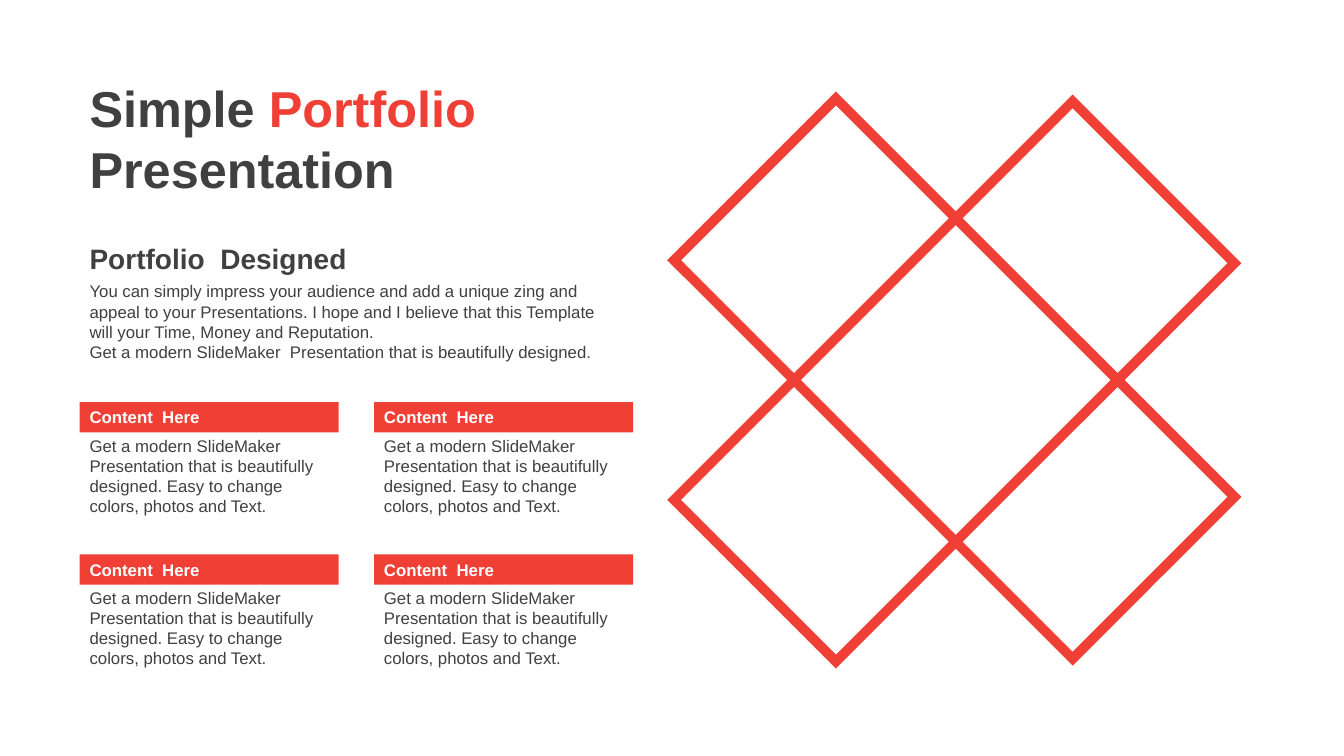
from itertools import product

from pptx import Presentation
from pptx.dml.color import RGBColor
from pptx.enum.shapes import MSO_SHAPE as Shape
from pptx.enum.text import MSO_ANCHOR as Anchor, MSO_AUTO_SIZE as AutoSize
from pptx.oxml.ns import qn
from pptx.util import Pt
from lxml.etree import SubElement

RED = RGBColor(0xF0, 0x40, 0x36)
GREY = RGBColor(0x40, 0x40, 0x40)
WHITE = RGBColor(0xFF, 0xFF, 0xFF)

EMU_PER_PX = 9144  # 100 px to the inch

INTRO = [
    "You can simply impress your audience and add a unique zing and appeal to your "
    "Presentations. I hope and I believe that this Template will your Time, Money "
    "and Reputation.",
    "Get a modern SlideMaker  Presentation that is beautifully designed.",
]
CARD_TITLE = "Content  Here"
CARD_BODY = ("Get a modern SlideMaker  Presentation that is beautifully designed. "
             "Easy to change colors, photos and Text.")


def px(*lengths):
    return [round(length * EMU_PER_PX) for length in lengths]


def add_text(slide, box, paragraphs, size=12, color=GREY, bold=False, fill=None,
             anchor=Anchor.TOP, grow=True, line_spacing=None, space_before=None):
    """Each paragraph is a string or a list of (text, color) runs."""
    if fill is None:
        holder = slide.shapes.add_textbox(*px(*box))
    else:
        holder = add_rectangle(slide, box)
        holder.fill.solid()
        holder.fill.fore_color.rgb = fill
        holder.line.fill.background()
    frame = holder.text_frame
    frame.word_wrap = True
    frame.auto_size = AutoSize.SHAPE_TO_FIT_TEXT if grow else AutoSize.NONE
    frame.vertical_anchor = anchor
    for index, content in enumerate(paragraphs):
        paragraph = frame.add_paragraph() if index else frame.paragraphs[0]
        paragraph.alignment = 1  # left
        paragraph.line_spacing = line_spacing
        paragraph.space_before = space_before
        runs = [(content, color)] if isinstance(content, str) else content
        for words, run_color in runs:
            run = paragraph.add_run()
            run.text = words
            run.font.name = "Arial"
            run.font.size = Pt(size)
            run.font.bold = bold
            run.font.color.rgb = run_color


def add_rectangle(slide, box):
    rectangle = slide.shapes.add_shape(Shape.RECTANGLE, *px(*box))
    rectangle.shadow.inherit = False
    return rectangle


def add_lattice(slide, left, top, width, height):
    """Two long frames, crossed at right angles."""
    for angle, drop in ((45, 3), (315, 0)):
        frame = add_rectangle(slide, (left, top + drop, width, height))
        frame.rotation = angle
        frame.fill.background()
        frame.line.color.rgb = RED
        frame.line.width = Pt(7)
        # Sharp corners
        SubElement(frame.line._get_or_add_ln(), qn("a:miter"), lim="800000")


def add_title(slide, left, top, width, height):
    add_text(slide, (left, top, width, height),
             [[("Simple", GREY), (" Portfolio", RED)], "Presentation"],
             size=36, bold=True)


def add_intro(slide, left, top, width, height):
    heading_height = 39
    add_text(slide, (left, top, width, heading_height), ["Portfolio  Designed"],
             size=20, bold=True, anchor=Anchor.MIDDLE, grow=False,
             line_spacing=1.1, space_before=Pt(4))
    add_text(slide, (left, top + heading_height, width, height - heading_height), INTRO)


def add_card(slide, left, top, width, height):
    body_offset = 28
    add_text(slide, (left, top, width, 30), [CARD_TITLE], color=WHITE, bold=True,
             fill=RED, anchor=Anchor.MIDDLE)
    add_text(slide, (left, top + body_offset, width, height - body_offset), [CARD_BODY])


def add_cards(slide, left, top, width, height):
    """Two rows of two cards that fill the box."""
    card_width, card_height = 257, 119
    for row, column in product(range(2), repeat=2):
        add_card(slide, left + column * (width - card_width),
                 top + row * (height - card_height), card_width, card_height)


def main():
    deck = Presentation()
    deck.slide_width, deck.slide_height = px(1333, 750)
    slide = deck.slides.add_slide(deck.slide_layouts[6])
    add_lattice(slide, 833, 96, 227, 559)
    add_intro(slide, 79, 235, 546, 130)
    add_cards(slide, 79, 399, 549, 270)
    add_title(slide, 79, 72, 460, 131)
    deck.save("out.pptx")


if __name__ == "__main__":
    main()
